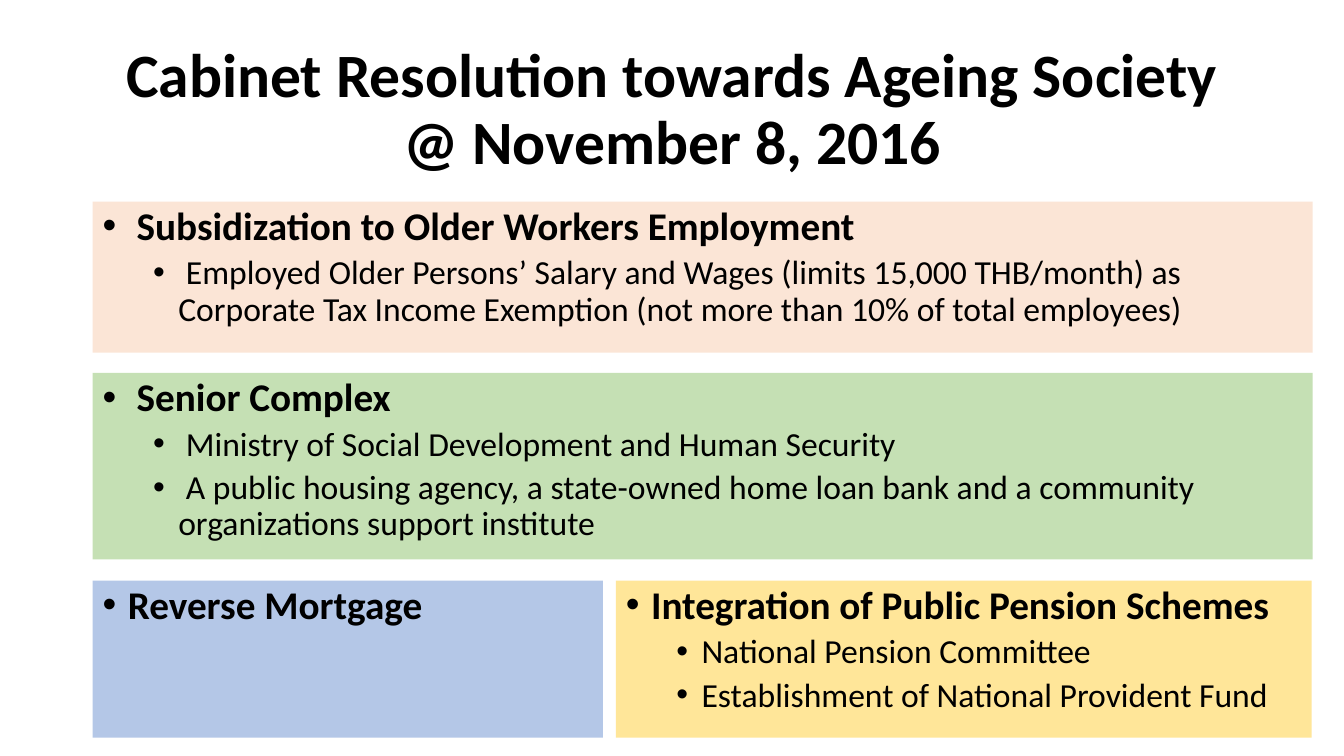
import dataclasses

import lxml.etree
import pptx
import pptx.dml.color
import pptx.enum.shapes
import pptx.enum.text
import pptx.oxml.ns
import pptx.util

Inches = pptx.util.Inches
Pt = pptx.util.Pt

LEFT = 0.92
FULL_WIDTH = 12.1
BOTTOM_ROW_TOP = 5.76
BOTTOM_ROW_HEIGHT = 1.56


@dataclasses.dataclass
class Panel:
    left: float
    top: float
    width: float
    height: float
    fill: str
    heading: str
    points: tuple[str, ...] = ()


PANELS = (
    Panel(
        LEFT, 2, FULL_WIDTH, 1.5, "FBE5D6",
        " Subsidization to Older Workers Employment",
        (
            " Employed Older Persons’ Salary and Wages (limits 15,000 THB/month) as "
            "Corporate Tax Income Exemption (not more than 10% of total employees)",
        ),
    ),
    Panel(
        LEFT, 3.7, FULL_WIDTH, 1.85, "C5E0B4",
        " Senior Complex",
        (
            " Ministry of Social Development and Human Security",
            " A public housing agency, a state-owned home loan bank and a community "
            "organizations support institute",
        ),
    ),
    Panel(
        LEFT, BOTTOM_ROW_TOP, 5.06, BOTTOM_ROW_HEIGHT, "B4C7E7",
        "Reverse Mortgage",
    ),
    Panel(
        6.11, BOTTOM_ROW_TOP, 6.9, BOTTOM_ROW_HEIGHT, "FFE699",
        "Integration of Public Pension Schemes",
        ("National Pension Committee", "Establishment of National Provident Fund"),
    ),
)


def color(value: str) -> pptx.dml.color.RGBColor:
    return pptx.dml.color.RGBColor.from_string(value)


def format_paragraph(para, size: float, bold: bool, align) -> None:
    para.alignment = align
    para.line_spacing = 0.9
    para.font.name = "Calibri"
    para.font.size = Pt(size)
    para.font.bold = bold
    para.font.color.rgb = color("000000")


def add_bullet(para, indent: float) -> None:
    properties = para._p.get_or_add_pPr()
    properties.set("marL", str(Inches(indent)))
    properties.set("indent", str(Inches(-0.25)))
    qn = pptx.oxml.ns.qn
    lxml.etree.SubElement(properties, qn("a:buFont"), typeface="Arial")
    lxml.etree.SubElement(properties, qn("a:buChar"), char="•")


def add_title(page, text: str) -> None:
    title = page.shapes.title
    title.left, title.top = Inches(LEFT), Inches(0.4)
    title.width, title.height = Inches(11.5), Inches(1.4)
    frame = title.text_frame
    frame.text = text
    frame.word_wrap = True
    frame.auto_size = pptx.enum.text.MSO_AUTO_SIZE.NONE
    frame.vertical_anchor = pptx.enum.text.MSO_ANCHOR.MIDDLE
    format_paragraph(frame.paragraphs[0], 44, True, pptx.enum.text.PP_ALIGN.CENTER)


def add_panel(page, panel: Panel) -> None:
    box = page.shapes.add_shape(
        pptx.enum.shapes.MSO_SHAPE.RECTANGLE,
        Inches(panel.left), Inches(panel.top),
        Inches(panel.width), Inches(panel.height),
    )
    box.shadow.inherit = False
    box.fill.solid()
    box.fill.fore_color.rgb = color(panel.fill)
    box.line.fill.background()
    frame = box.text_frame
    frame.word_wrap = True
    frame.vertical_anchor = pptx.enum.text.MSO_ANCHOR.TOP

    heading = frame.paragraphs[0]
    heading.text = panel.heading
    add_bullet(heading, 0.25)
    format_paragraph(heading, 28, True, pptx.enum.text.PP_ALIGN.LEFT)
    for point in panel.points:
        para = frame.add_paragraph()
        para.text = point
        para.level = 1
        add_bullet(para, 0.75)
        format_paragraph(para, 24, False, pptx.enum.text.PP_ALIGN.LEFT)
        para.space_before = Pt(5)


def main() -> None:
    deck = pptx.Presentation()
    deck.slide_width, deck.slide_height = Inches(13.33), Inches(7.5)
    page = deck.slides.add_slide(deck.slide_layouts[5])
    add_title(page, "Cabinet Resolution towards Ageing Society\v@ November 8, 2016")
    for panel in PANELS:
        add_panel(page, panel)
    deck.save("out.pptx")


if __name__ == "__main__":
    main()
